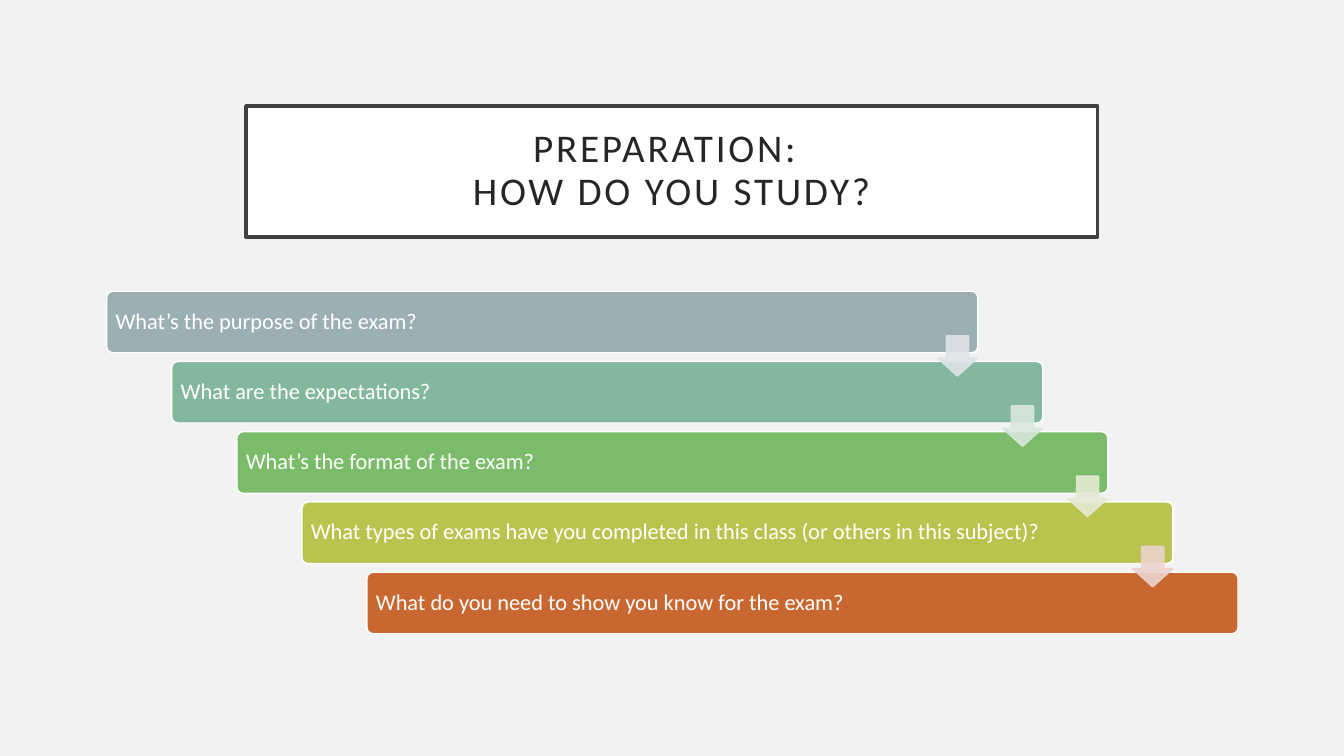
from lxml import etree
from pptx import Presentation
from pptx.dml.color import RGBColor
from pptx.enum.shapes import MSO_SHAPE
from pptx.enum.text import MSO_ANCHOR, PP_ALIGN
from pptx.oxml.ns import qn
from pptx.util import Cm, Pt

RECT, ROUNDED, ARROW = MSO_SHAPE.RECTANGLE, MSO_SHAPE.ROUNDED_RECTANGLE, MSO_SHAPE.DOWN_ARROW
MIDDLE = MSO_ANCHOR.MIDDLE
LEFT, CENTER = PP_ALIGN.LEFT, PP_ALIGN.CENTER

TITLE = "PREPARATION: \vHOW DO YOU STUDY?"
QUESTIONS = [
    "What’s the purpose of the exam?",
    "What are the expectations?",
    "What’s the format of the exam?",
    "What types of exams have you completed in this class (or others in this subject)?",
    "What do you need to show you know for the exam?",
]

THEME = {
    "font": "Calibri",
    "title_size": 28,
    "question_size": 16,
    "background": "F2F2F2",
    "white": "FFFFFF",
    "title_line": "404040",
    "title_text": "262626",
    "bars": ["9BAFB5", "83B79E", "7ABC69", "BAC34D", "C96731"],
    "arrows": ["DEE3E5", "D9E7DC", "E4E9D3", "EBD3CD"],
}

TITLE_BOX = (6.2, 2.67, 21.46, 3.3)
BAR_LEFT, BAR_TOP, BAR_WIDTH, BAR_HEIGHT = 2.69, 7.34, 21.95, 1.55
STEP_X, STEP_Y = 1.64, 1.77
ARROW_SIZE, ARROW_DROP = 1.02, 1.12


def rgb(value):
    return RGBColor.from_string(value)


def add_box(s, kind, box, fill, line, line_width):
    sp = s.shapes.add_shape(kind, *map(Cm, box))
    sp.shadow.inherit = False
    sp.fill.solid()
    sp.fill.fore_color.rgb = rgb(fill)
    sp.line.color.rgb = rgb(line)
    sp.line.width = Pt(line_width)
    return sp


def write(sp, text, size, color, align, inset):
    tf = sp.text_frame
    tf.word_wrap = True
    tf.vertical_anchor = MIDDLE
    tf.margin_left = tf.margin_right = tf.margin_top = tf.margin_bottom = Cm(inset)
    p = tf.paragraphs[0]
    p.text = text
    p.alignment = align
    p.line_spacing = 0.9
    p.font.name = THEME["font"]
    p.font.size = Pt(size)
    p.font.color.rgb = rgb(color)
    return p


def add_title(s):
    sp = add_box(s, RECT, TITLE_BOX, THEME["white"], THEME["title_line"], 2.5)
    p = write(sp, TITLE, THEME["title_size"], THEME["title_text"], CENTER, 0.51)
    for r in p.runs:
        r.font._element.set("spc", "200")


def add_bar(s, i, question):
    box = (BAR_LEFT + i * STEP_X, BAR_TOP + i * STEP_Y, BAR_WIDTH, BAR_HEIGHT)
    sp = add_box(s, ROUNDED, box, THEME["bars"][i], THEME["white"], 1)
    sp.adjustments[0] = 0.1
    write(sp, question, THEME["question_size"], THEME["white"], LEFT, 0.18)


def add_arrow(s, i, color):
    left = BAR_LEFT + i * STEP_X + BAR_WIDTH - ARROW_SIZE
    top = BAR_TOP + i * STEP_Y + ARROW_DROP
    sp = add_box(s, ARROW, (left, top, ARROW_SIZE, ARROW_SIZE), color, color, 1)
    sp.adjustments[0] = 0.55
    sp.adjustments[1] = 0.45
    for clr in sp._element.spPr.iter(qn("a:srgbClr")):
        etree.SubElement(clr, qn("a:alpha")).set("val", "90000")


def main():
    prs = Presentation()
    prs.slide_width, prs.slide_height = Cm(33.87), Cm(19.05)
    s = prs.slides.add_slide(prs.slide_layouts[6])
    s.background.fill.solid()
    s.background.fill.fore_color.rgb = rgb(THEME["background"])
    add_title(s)
    for i, question in enumerate(QUESTIONS):
        add_bar(s, i, question)
    for i, color in enumerate(THEME["arrows"]):
        add_arrow(s, i, color)
    prs.save("out.pptx")


if __name__ == "__main__":
    main()
